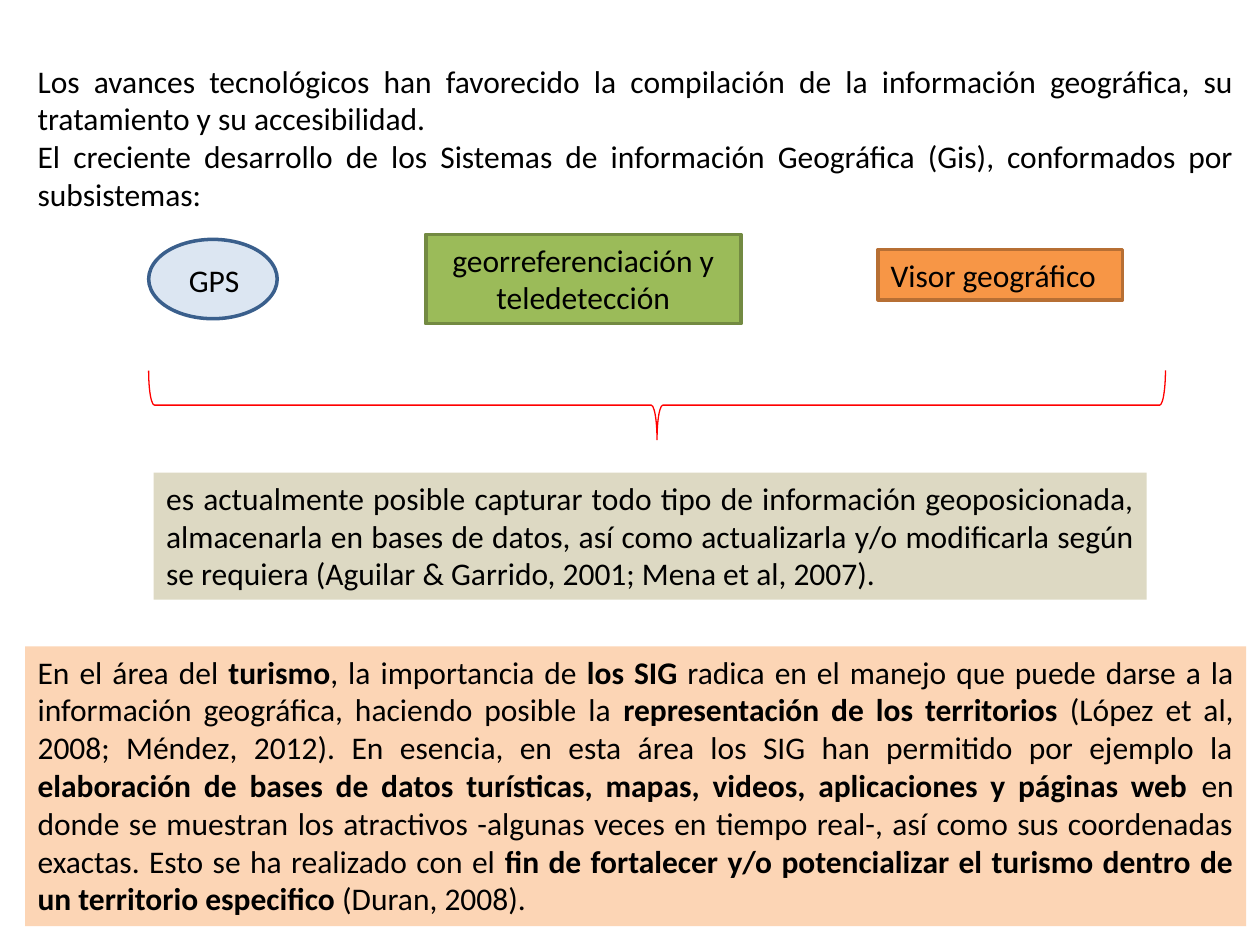
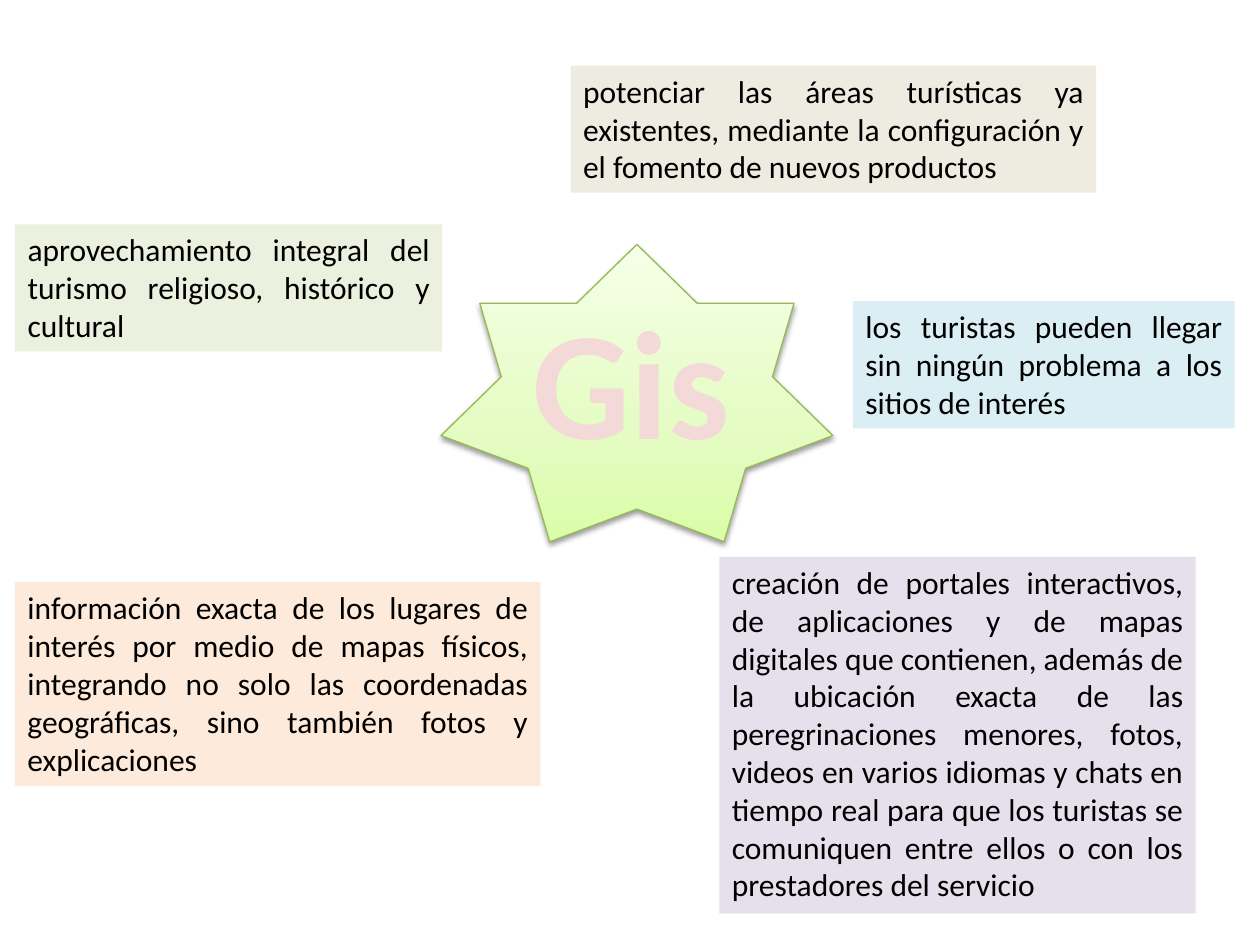
from dataclasses import dataclass

from pptx import Presentation
from pptx.dml.color import RGBColor
from pptx.enum.shapes import MSO_SHAPE
from pptx.enum.text import MSO_AUTO_SIZE, PP_ALIGN
from pptx.oxml import parse_xml
from pptx.oxml.ns import nsdecls
from pptx.util import Inches, Pt

OVAL, BRACE, STAR = MSO_SHAPE.OVAL, MSO_SHAPE.LEFT_BRACE, MSO_SHAPE.STAR_7_POINT
LEFT, CENTER, JUSTIFY = PP_ALIGN.LEFT, PP_ALIGN.CENTER, PP_ALIGN.JUSTIFY
FIT_SHAPE = MSO_AUTO_SIZE.SHAPE_TO_FIT_TEXT


@dataclass(frozen=True)
class Theme:
    font: str = "Calibri"
    body_size: float = 18
    star_size: float = 88
    thin: float = 0.75
    thick: float = 2
    text: str = "000000"
    brace: str = "FF0000"
    gps: str = "DCE6F2"
    gps_edge: str = "3A5F8C"
    sensing: str = "9BBB59"
    sensing_edge: str = "738A42"
    viewer: str = "F79646"
    viewer_edge: str = "B76F34"
    capture: str = "DDD9C3"
    tourism: str = "FCD5B5"
    star_text: str = "F3D9D8"
    star_edge: str = "98B955"
    star_stops: tuple = ((0, "DAFDA7"), (35, "E4FCC2"), (100, "F5FFE7"))
    products: str = "EEECE1"
    heritage: str = "EBF1DE"
    places: str = "FDEADA"
    visitors: str = "DBEEF4"
    portals: str = "E6E0EC"


THEME = Theme()

INTRO = (
    "Los avances tecnológicos han favorecido la compilación de la información geográfica, "
    "su tratamiento y su accesibilidad.",
    "El creciente desarrollo de los Sistemas de información Geográfica (Gis), "
    "conformados por subsistemas:",
)
CAPTURE = (
    "es actualmente posible capturar todo tipo de información geoposicionada, almacenarla "
    "en bases de datos, así como actualizarla y/o modificarla según se requiera "
    "(Aguilar & Garrido, 2001; Mena et al, 2007)."
)
TOURISM = (
    "En el área del **turismo**, la importancia de **los SIG **radica en el manejo que puede "
    "darse a la información geográfica, haciendo posible la **representación de los "
    "territorios **(López et al, 2008; Méndez, 2012). En esencia, en esta área los SIG han "
    "permitido por ejemplo la **elaboración de bases de datos turísticas, mapas, videos, "
    "aplicaciones y páginas web **en donde se muestran los atractivos -algunas veces en "
    "tiempo real-, así como sus coordenadas exactas. Esto se ha realizado con el **fin de "
    "fortalecer y/o potencializar el turismo dentro de un territorio especifico** "
    "(Duran, 2008)."
)
BENEFITS = (
    ((4.53, 0.52, 4.17, 1.01), THEME.products,
     "potenciar las áreas turísticas ya existentes, mediante la configuración y el fomento "
     "de nuevos productos"),
    ((0.12, 1.78, 3.39, 1.01), THEME.heritage,
     "aprovechamiento integral del turismo religioso, histórico y cultural"),
    ((0.12, 4.62, 4.17, 1.62), THEME.places,
     "información exacta de los lugares de interés por medio de mapas físicos, integrando no "
     "solo las coordenadas geográficas, sino también fotos y explicaciones"),
    ((6.77, 2.39, 3.03, 1.01), THEME.visitors,
     "los turistas pueden llegar sin ningún problema a los sitios de interés"),
    ((5.71, 4.42, 3.78, 2.83), THEME.portals,
     "creación de portales interactivos, de aplicaciones y de mapas digitales que contienen, "
     "además de la ubicación exacta de las peregrinaciones menores, fotos, videos en varios "
     "idiomas y chats en tiempo real para que los turistas se comuniquen entre ellos o con "
     "los prestadores del servicio"),
)


def apply_format(target, values):
    for name, value in values.items():
        setattr(target, name, value)


def paint(shape, fill=None, edge=None, width=THEME.thin):
    if fill:
        shape.fill.solid()
        shape.fill.fore_color.rgb = RGBColor.from_string(fill)
    else:
        shape.fill.background()
    if edge:
        shape.line.color.rgb = RGBColor.from_string(edge)
        shape.line.width = Pt(width)
    else:
        shape.line.fill.background()


def add_figure(page, kind, box, **colors):
    shape = page.shapes.add_shape(kind, *map(Inches, box))
    shape.shadow.inherit = False
    paint(shape, **colors)
    return shape


def add_text(page, box, *lines, align=JUSTIFY, wrap=True, size=THEME.body_size,
             color=THEME.text, bold=False, **colors):
    shape = page.shapes.add_textbox(*map(Inches, box))
    paint(shape, **colors)
    frame = shape.text_frame
    apply_format(frame, {"word_wrap": wrap, "auto_size": FIT_SHAPE})
    for index, line in enumerate(lines):
        para = frame.add_paragraph() if index else frame.paragraphs[0]
        para.alignment = align
        for part, words in enumerate(line.split("**")):
            span = para.add_run()
            span.text = words
            apply_format(span.font, {"name": THEME.font, "size": Pt(size),
                                     "bold": bold or part % 2 == 1})
            span.font.color.rgb = RGBColor.from_string(color)


def add_subsystems(page, box):
    left, top, _, _ = box
    add_figure(page, OVAL, (left, top + 0.04, 1.02, 0.63),
               fill=THEME.gps, edge=THEME.gps_edge, width=THEME.thick)
    add_text(page, (left + 0.22, top + 0.16, 0.61, 0.4), "GPS", align=LEFT, wrap=False)
    add_text(page, (left + 2.2, top, 2.5, 0.71), "georreferenciación y teledetección",
             align=CENTER, fill=THEME.sensing, edge=THEME.sensing_edge, width=THEME.thick)
    add_text(page, (left + 5.79, top + 0.12, 1.94, 0.4), "Visor geográfico",
             align=LEFT, wrap=False, fill=THEME.viewer, edge=THEME.viewer_edge,
             width=THEME.thick)


def add_brace_below(page, box):
    left, top, width, height = box
    shift = (width - height) / 2
    brace = add_figure(page, BRACE, (left + shift, top - shift, height, width),
                       edge=THEME.brace)
    brace.rotation = 270


def add_star(page, box):
    left, top, _, _ = box
    star = add_figure(page, STAR, box, edge=THEME.star_edge)
    properties = star.fill._xPr
    stops = "".join(f'<a:gs pos="{place * 1000}"><a:srgbClr val="{color}"/></a:gs>'
                    for place, color in THEME.star_stops)
    gradient = parse_xml(f'<a:gradFill {nsdecls("a")} rotWithShape="1"><a:gsLst>{stops}'
                         '</a:gsLst><a:lin ang="16200000" scaled="1"/></a:gradFill>')
    properties.replace(properties.find("{*}noFill"), gradient)
    shadow = parse_xml(
        f'<a:outerShdw {nsdecls("a")} blurRad="{Pt(3.1)}" dist="{Pt(1.6)}" dir="5400000" '
        'rotWithShape="0"><a:srgbClr val="000000"><a:alpha val="38000"/></a:srgbClr>'
        '</a:outerShdw>')
    properties.find("{*}effectLst").append(shadow)
    add_text(page, (left + 0.63, top + 0.28, 1.78, 1.58), "Gis", align=LEFT, wrap=False,
             size=THEME.star_size, color=THEME.star_text, bold=True)


def build_subsystems_page(page):
    add_text(page, (0.2, 0.44, 9.69, 1.31), *INTRO)
    add_subsystems(page, (1.18, 1.86, 7.73, 0.71))
    add_text(page, (1.22, 3.75, 7.88, 1.01), CAPTURE, fill=THEME.capture)
    add_brace_below(page, (1.18, 2.94, 8.07, 0.55))
    add_text(page, (0.2, 5.13, 9.69, 2.22), TOURISM, fill=THEME.tourism)


def build_benefits_page(page):
    add_star(page, (3.5, 1.94, 3.11, 2.36))
    for box, color, words in BENEFITS:
        add_text(page, box, words, fill=color)


def main():
    deck = Presentation()
    apply_format(deck, {"slide_width": Inches(10), "slide_height": Inches(7.5)})
    blank = deck.slide_layouts[6]
    for build in (build_subsystems_page, build_benefits_page):
        build(deck.slides.add_slide(blank))
    deck.save("out.pptx")


if __name__ == "__main__":
    main()
